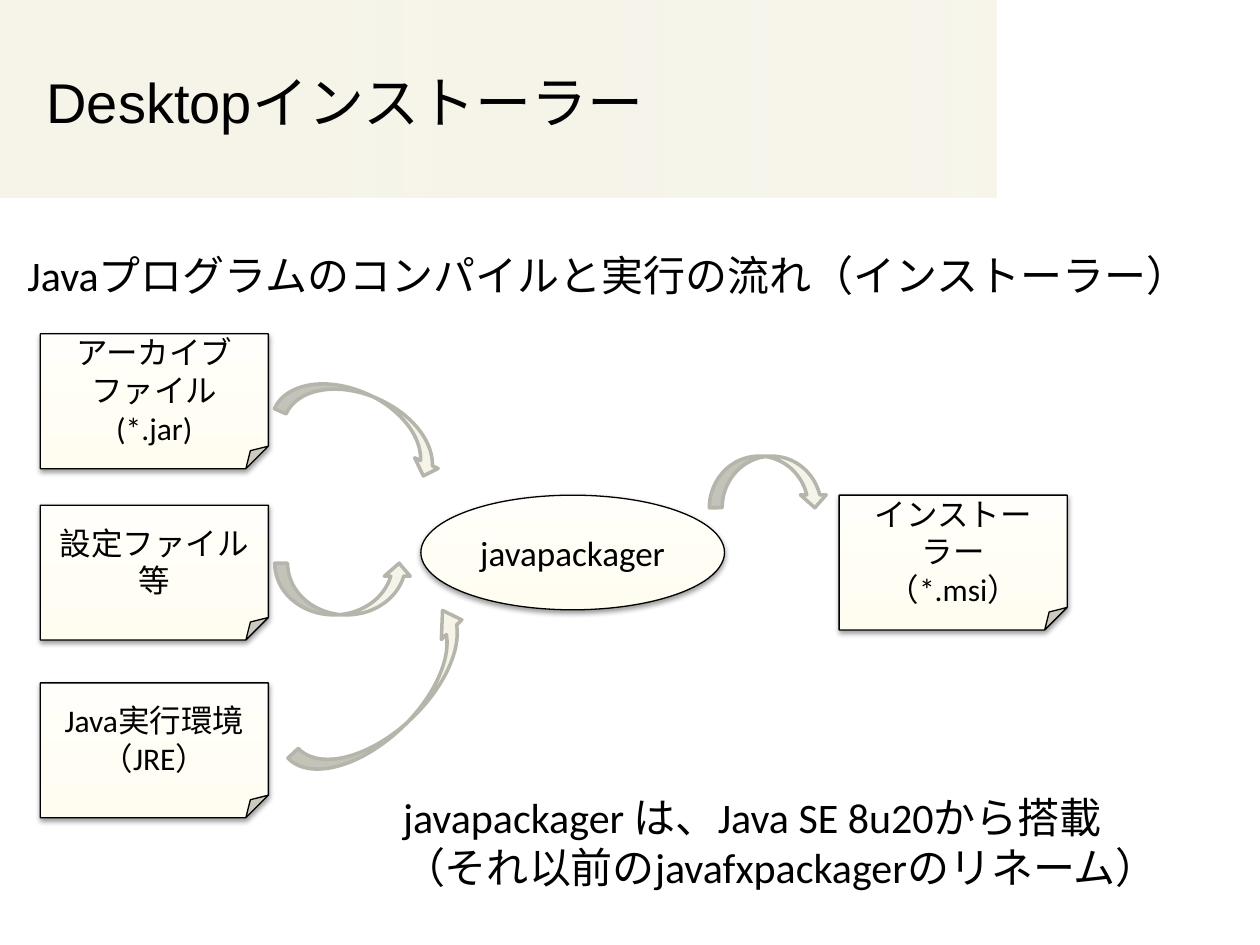
from dataclasses import dataclass

import pptx
import pptx.dml.color
import pptx.enum.shapes
import pptx.enum.text
import pptx.oxml
import pptx.oxml.ns
import pptx.util

Preset = pptx.enum.shapes.MSO_SHAPE
Align = pptx.enum.text.PP_ALIGN
Anchor = pptx.enum.text.MSO_ANCHOR


@dataclass(frozen=True)
class Theme:
    text: str = "000000"
    band: str = "F6F4E8"
    arrow_line: str = "B6B5AC"
    # Gradient stops: position %, colour, opacity %
    band_stops: tuple = ((0, "F6F4E8", 80), (0, "F6F4E8", 100), (100, "F6F4E8", 85))
    node_stops: tuple = ((0, "FFFDEF", 100), (35, "FFFDF4", 100), (100, "FFFEFA", 100))
    body_font: str = "Calibri"
    title_font: str = "Arial"
    title_size: int = 32
    body_size: int = 24
    tool_size: int = 20
    file_size: int = 18
    node_line: float = 0.75
    arrow_line_width: float = 2


@dataclass(frozen=True)
class Box:
    """Left, top, width and height in cells of the slide grid."""
    left: float
    top: float
    width: float
    height: float


@dataclass(frozen=True)
class Node:
    preset: Preset
    box: Box
    text: str
    size: int


@dataclass(frozen=True)
class Arrow:
    box: Box
    rotation: float = 0
    flipped: bool = False
    head: float = 0.25


@dataclass(frozen=True)
class Caption:
    box: Box
    text: str
    font: str
    size: int
    anchor: Anchor = Anchor.TOP


THEME = Theme()
WIDTH, HEIGHT = pptx.util.Inches(10), pptx.util.Inches(7.5)
COLUMNS, ROWS = 100, 75
FILE_WIDTH, FILE_HEIGHT = 18.1, 10.7
INPUT_LEFT, OUTPUT_LEFT, TOOL_TOP = 3.2, 66.6, 39.3


def file_node(left: float, top: float, text: str) -> Node:
    return Node(Preset.FOLDED_CORNER, Box(left, top, FILE_WIDTH, FILE_HEIGHT),
                text, THEME.file_size)


NODES = (
    file_node(INPUT_LEFT, 26.5, "アーカイブ\nファイル\n(*.jar)"),
    file_node(INPUT_LEFT, 40.1, "設定ファイル等"),
    file_node(INPUT_LEFT, 54.2, "Java実行環境\n（JRE）"),
    Node(Preset.OVAL, Box(33.4, TOOL_TOP, 24.1, 9.1), "javapackager", THEME.tool_size),
    file_node(OUTPUT_LEFT, TOOL_TOP, "インストーラー\n（*.msi）"),
)
ARROWS = (
    Arrow(Box(22, 31.4, 14, 4.1), rotation=24.3),
    Arrow(Box(21.8, 44.7, 10.9, 4.1), rotation=180, flipped=True),
    Arrow(Box(21.9, 53.3, 18.1, 4.5), rotation=136.3, flipped=True, head=0.355),
    Arrow(Box(56.3, 36.2, 9.4, 4.1)),
)
CAPTIONS = (
    Caption(Box(2.7, 3, 74.8, 10.1), "Desktopインストーラー",
            THEME.title_font, THEME.title_size, Anchor.MIDDLE),
    Caption(Box(1.2, 19.3, 97.6, 5), "Javaプログラムのコンパイルと実行の流れ（インストーラー）",
            THEME.body_font, THEME.body_size),
    Caption(Box(31, 62.3, 65.8, 9.1),
            "javapackager は、Java SE 8u20から搭載\n（それ以前のjavafxpackagerのリネーム）",
            THEME.body_font, THEME.body_size),
)


def place(box: Box) -> tuple[int, int, int, int]:
    return (round(WIDTH * box.left / COLUMNS), round(HEIGHT * box.top / ROWS),
            round(WIDTH * box.width / COLUMNS), round(HEIGHT * box.height / ROWS))


def rgb(value: str) -> pptx.dml.color.RGBColor:
    return pptx.dml.color.RGBColor.from_string(value)


def parse_drawing(tag: str, attributes: str, content: str):
    namespace = pptx.oxml.ns.nsdecls("a")
    return pptx.oxml.parse_xml(f"<a:{tag} {namespace} {attributes}>{content}</a:{tag}>")


def fill_gradient(shape, stops: tuple, angle: int) -> None:
    marks = "".join(
        f'<a:gs pos="{position * 1000}"><a:srgbClr val="{color}">'
        f'<a:alpha val="{opacity * 1000}"/></a:srgbClr></a:gs>'
        for position, color, opacity in stops)
    gradient = parse_drawing("gradFill", 'rotWithShape="1"',
                             f'<a:gsLst>{marks}</a:gsLst><a:lin ang="{angle * 60000}" scaled="0"/>')
    shape._element.spPr.find(pptx.oxml.ns.qn("a:prstGeom")).addnext(gradient)


def add_soft_shadow(shape) -> None:
    effects = shape._element.spPr.find(pptx.oxml.ns.qn("a:effectLst"))
    effects.append(parse_drawing(
        "outerShdw",
        f'blurRad="{pptx.util.Pt(3.1)}" dist="{pptx.util.Pt(1.6)}" dir="5400000" rotWithShape="0"',
        '<a:srgbClr val="000000"><a:alpha val="38000"/></a:srgbClr>'))


def add_plain_shape(slide, preset: Preset, box: Box):
    shape = slide.shapes.add_shape(preset, *place(box))
    shape.shadow.inherit = False
    return shape


def write_text(shape, text: str, font: str, size: int, align: Align, anchor: Anchor) -> None:
    frame = shape.text_frame
    frame.word_wrap = True
    frame.vertical_anchor = anchor
    frame.text = text
    for paragraph in frame.paragraphs:
        paragraph.alignment = align
        for run in paragraph.runs:
            run.font.name = font
            run.font.size = pptx.util.Pt(size)
            run.font.color.rgb = rgb(THEME.text)


def add_band(slide) -> None:
    band = add_plain_shape(slide, Preset.RECTANGLE, Box(0, 0, 79.1, 15.7))
    fill_gradient(band, THEME.band_stops, 0)
    band.line.fill.background()


def add_node(slide, node: Node) -> None:
    shape = add_plain_shape(slide, node.preset, node.box)
    fill_gradient(shape, THEME.node_stops, 270)
    shape.line.color.rgb = rgb(THEME.text)
    shape.line.width = pptx.util.Pt(THEME.node_line)
    add_soft_shadow(shape)
    write_text(shape, node.text, THEME.body_font, node.size, Align.CENTER, Anchor.MIDDLE)


def add_arrow(slide, arrow: Arrow) -> None:
    shape = add_plain_shape(slide, Preset.CURVED_DOWN_ARROW, arrow.box)
    shape.adjustments[2] = arrow.head
    shape.rotation = arrow.rotation
    if arrow.flipped:
        shape._element.spPr.xfrm.set("flipH", "1")
    shape.fill.solid()
    shape.fill.fore_color.rgb = rgb(THEME.band)
    shape.line.color.rgb = rgb(THEME.arrow_line)
    shape.line.width = pptx.util.Pt(THEME.arrow_line_width)


def add_caption(slide, caption: Caption) -> None:
    shape = slide.shapes.add_textbox(*place(caption.box))
    write_text(shape, caption.text, caption.font, caption.size, Align.LEFT, caption.anchor)


def main() -> None:
    presentation = pptx.Presentation()
    presentation.slide_width, presentation.slide_height = WIDTH, HEIGHT
    slide = presentation.slides.add_slide(presentation.slide_layouts[6])

    # Title band, then the packaging flow, then the wording around it
    add_band(slide)
    for node in NODES:
        add_node(slide, node)
    for arrow in ARROWS:
        add_arrow(slide, arrow)
    for caption in CAPTIONS:
        add_caption(slide, caption)

    presentation.save("out.pptx")


if __name__ == "__main__":
    main()
